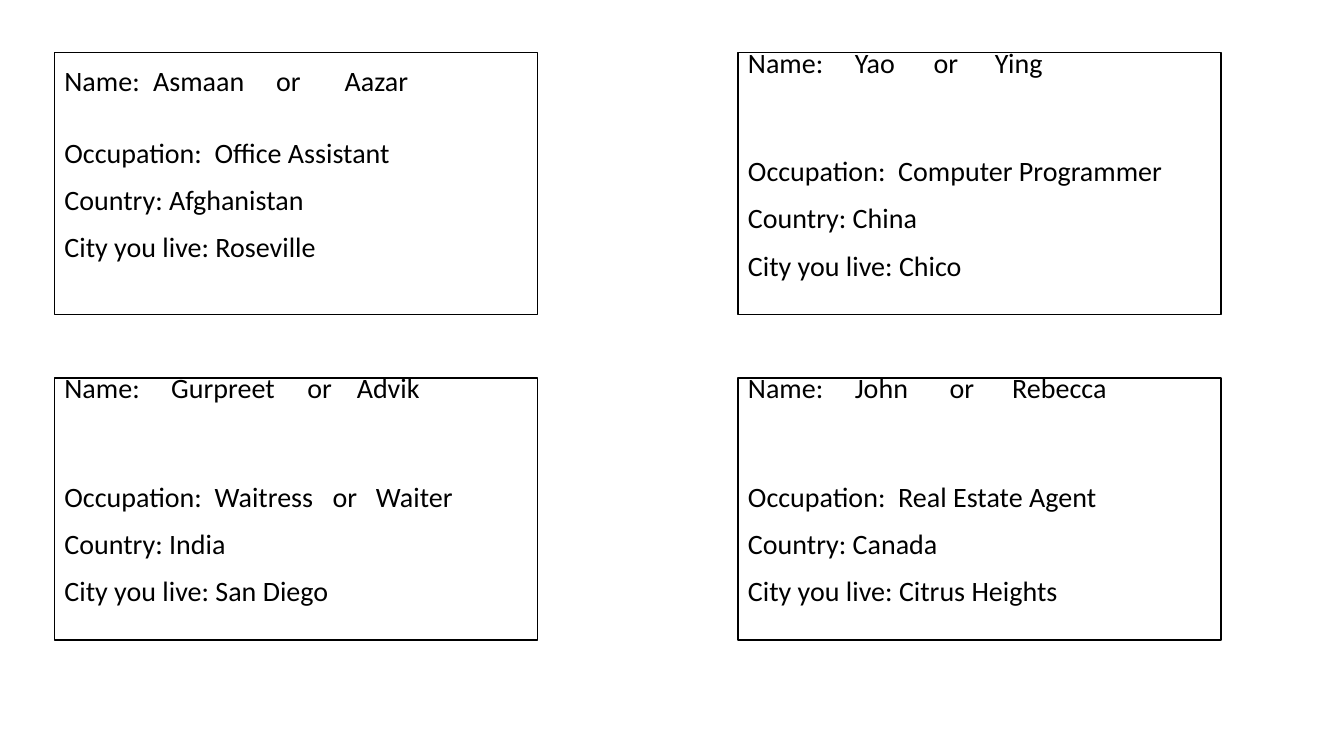
from pptx import Presentation
from pptx.dml.color import RGBColor
from pptx.enum.shapes import MSO_SHAPE
from pptx.enum.text import MSO_ANCHOR, PP_ALIGN
from pptx.oxml.xmlchemy import OxmlElement
from pptx.util import Inches, Pt

COLORS = {"paper": "FFFFFF", "ink": "000000"}
FONT = {"name": "Calibri", "size": Pt(20)}
FRAME = {
    "word_wrap": True,
    "vertical_anchor": MSO_ANCHOR.MIDDLE,
    "margin_left": Inches(0.1),
    "margin_right": Inches(0.1),
    "margin_top": Inches(0.05),
    "margin_bottom": Inches(0.47),
}
PARAGRAPH = {"alignment": PP_ALIGN.LEFT, "line_spacing": 1.07}

LEFT, TOP = 0.54, 0.52
CARD_W, CARD_H = 4.79, 2.6
COLUMN_STEP, ROW_STEP = 6.78, 3.23
OCCUPATION_TABS = (1.49, 2.66, 3.09)

# names, tab stops of the names, gap below them (pt), occupation, country, city
CARDS = [
    ("Asmaan\tor\tAazar", (0.88, 2.1, 2.78), 26,
     "Office Assistant", "Afghanistan", "Roseville"),
    ("Yao\tor\tYing", (1.06, 1.84, 2.45), 52,
     "Computer Programmer", "China", "Chico"),
    ("Gurpreet\tor\tAdvik", (1.06, 2.41, 2.9), 52,
     "Waitress\tor\tWaiter", "India", "San Diego"),
    ("John\tor\tRebecca", (1.06, 2.0, 2.62), 52,
     "Real Estate Agent", "Canada", "Citrus Heights"),
]


def rgb(key):
    return RGBColor.from_string(COLORS[key])


def apply(target, values):
    for name, value in values.items():
        setattr(target, name, value)


def set_tabs(p, stops):
    """Give the paragraph left tab stops, in inches."""
    tabs = OxmlElement("a:tabLst")
    for stop in stops:
        tab = OxmlElement("a:tab")
        tab.set("pos", str(Inches(stop)))
        tab.set("algn", "l")
        tabs.append(tab)
    p._p.get_or_add_pPr().append(tabs)


def add_line(p, text, gap=8, stops=()):
    apply(p, PARAGRAPH)
    p.space_after = Pt(gap)
    if stops:
        set_tabs(p, stops)
    r = p.add_run()
    r.text = text
    apply(r.font, FONT)
    r.font.color.rgb = rgb("ink")


def add_card(s, x, y, card):
    names, name_tabs, gap, occupation, country, city = card
    sp = s.shapes.add_shape(MSO_SHAPE.RECTANGLE, Inches(x), Inches(y),
                            Inches(CARD_W), Inches(CARD_H))
    sp.shadow.inherit = False
    sp.fill.solid()
    sp.fill.fore_color.rgb = rgb("paper")
    sp.line.color.rgb = rgb("ink")
    sp.line.width = Pt(1)
    tf = sp.text_frame
    apply(tf, FRAME)
    add_line(tf.paragraphs[0], f"Name:\t{names}", gap, name_tabs)
    add_line(tf.add_paragraph(), f"Occupation:\t{occupation}",
             stops=OCCUPATION_TABS)
    add_line(tf.add_paragraph(), f"Country: {country}")
    add_line(tf.add_paragraph(), f"City you live: {city}")


def main():
    prs = Presentation()
    prs.slide_width, prs.slide_height = Inches(13.33), Inches(7.5)
    s = prs.slides.add_slide(prs.slide_layouts[6])
    for i, card in enumerate(CARDS):
        row, column = divmod(i, 2)
        add_card(s, LEFT + column * COLUMN_STEP, TOP + row * ROW_STEP, card)
    prs.save("out.pptx")


if __name__ == "__main__":
    main()
